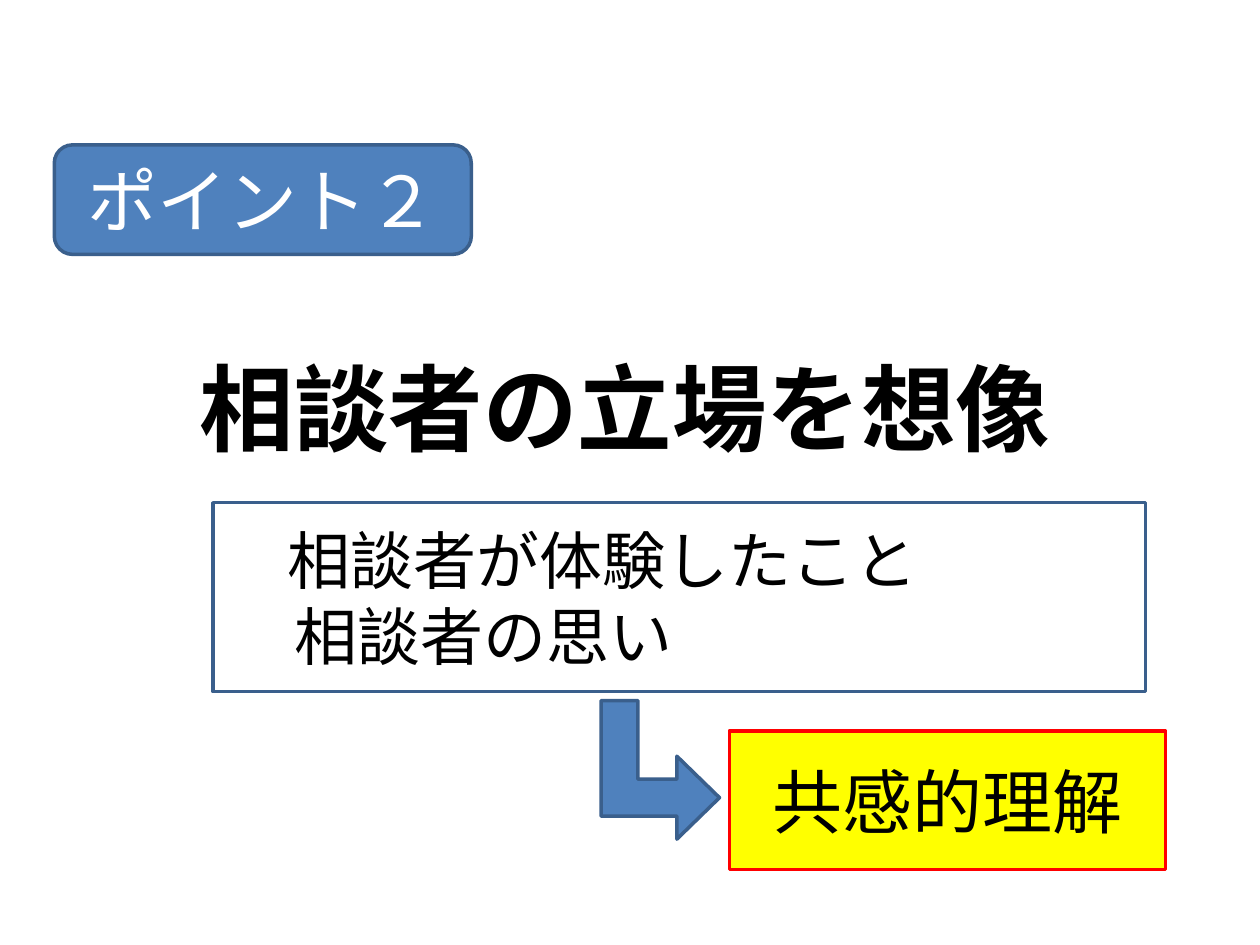
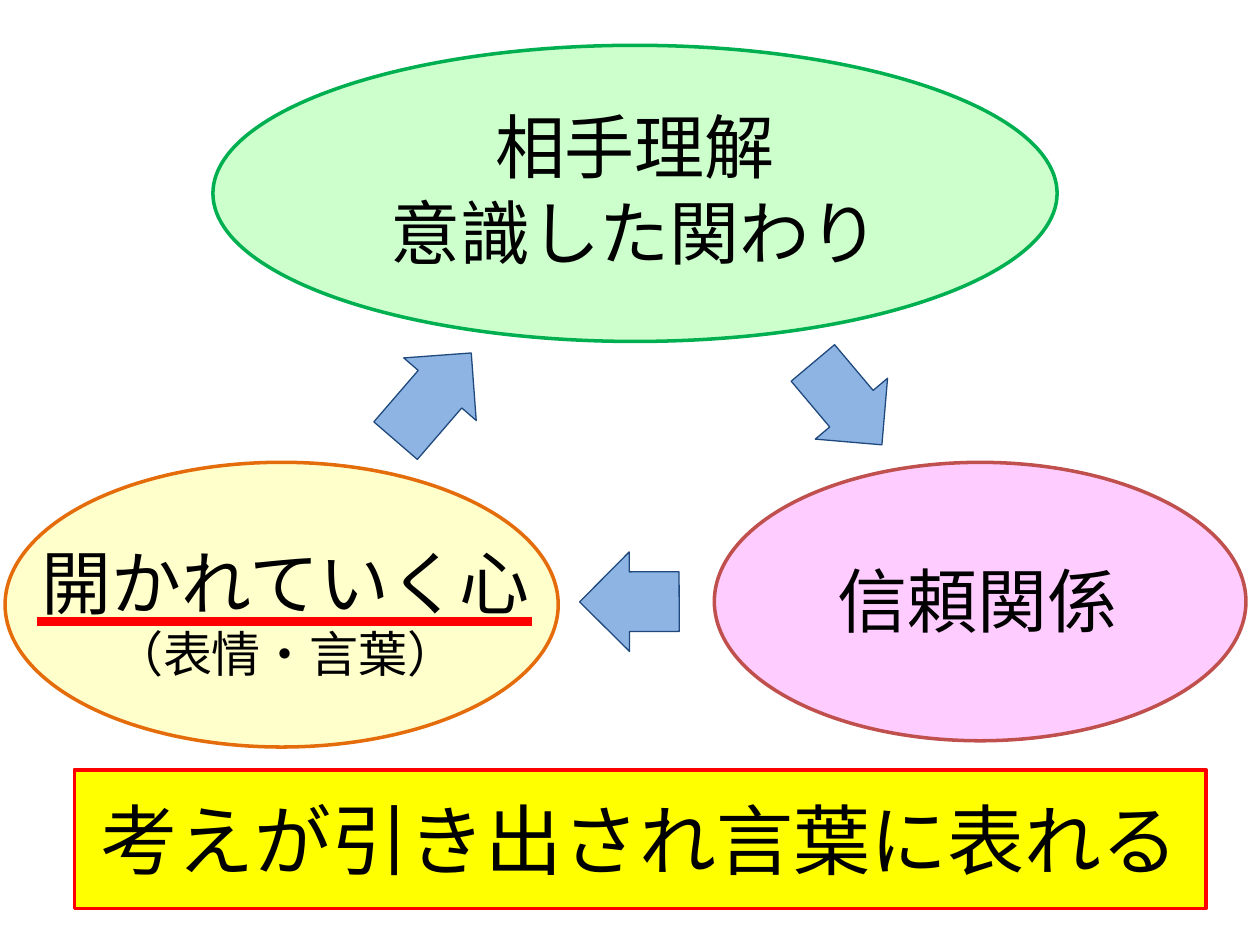
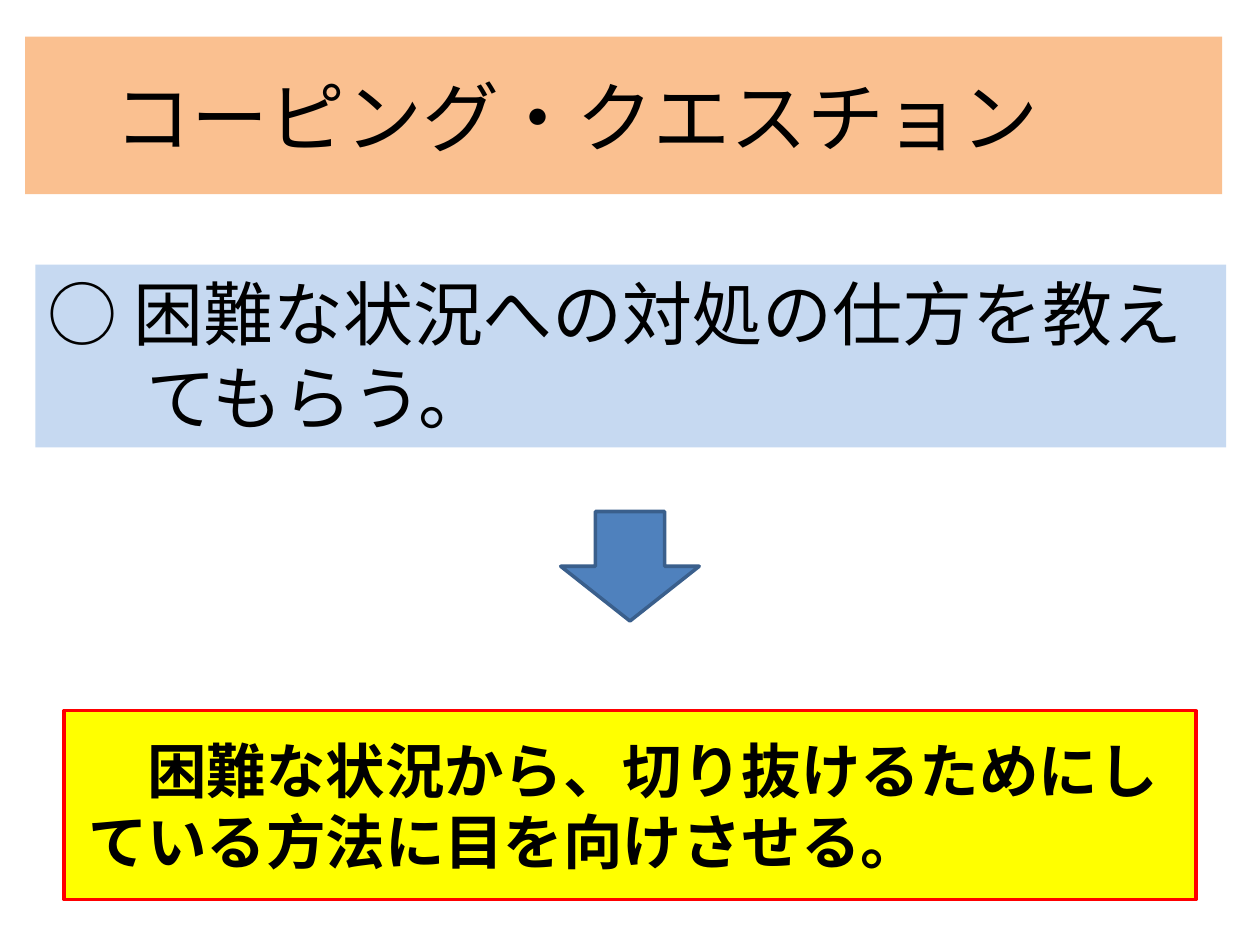
from dataclasses import dataclass
from typing import Optional

from lxml.etree import SubElement
from pptx import Presentation
from pptx.dml.color import RGBColor
from pptx.enum.shapes import MSO_CONNECTOR as Connector, MSO_SHAPE as Geometry
from pptx.enum.text import MSO_ANCHOR as Anchor, PP_ALIGN as Align
from pptx.oxml.ns import qn
from pptx.util import Pt

# Shared look
FONT = "Noto Sans CJK JP"
BLACK = RGBColor(0x00, 0x00, 0x00)
WHITE = RGBColor(0xFF, 0xFF, 0xFF)
BLUE = RGBColor(0x4F, 0x81, 0xBD)
BLUE_EDGE = RGBColor(0x3A, 0x5F, 0x8C)
CYCLE_BLUE = RGBColor(0x8E, 0xB4, 0xE3)
CYCLE_EDGE = RGBColor(0x1F, 0x49, 0x7D)
PALE_BLUE = RGBColor(0xC6, 0xD9, 0xF1)
PEACH = RGBColor(0xFA, 0xC0, 0x90)
YELLOW = RGBColor(0xFF, 0xFF, 0x00)
RED = RGBColor(0xFF, 0x00, 0x00)
PALE_GREEN = RGBColor(0xCC, 0xFF, 0xCC)
GREEN = RGBColor(0x00, 0xB0, 0x50)
PINK = RGBColor(0xFF, 0xCC, 0xFF)
BRICK = RGBColor(0xC0, 0x50, 0x4D)
CREAM = RGBColor(0xFF, 0xFF, 0xCC)
ORANGE = RGBColor(0xE4, 0x6C, 0x0A)


@dataclass(frozen=True)
class Frame:
    left: float
    top: float
    width: float
    height: float


@dataclass(frozen=True)
class Line:
    """One paragraph; lengths are in points."""
    text: str
    size: float
    color: RGBColor = BLACK
    bold: bool = False
    align: Align = Align.CENTER
    margin: float = 0
    indent: float = 0
    spacing: Optional[float] = None
    after: float = 0


@dataclass(frozen=True)
class Figure:
    geometry: Geometry
    frame: Frame
    fill: Optional[RGBColor] = None
    edge: Optional[RGBColor] = None
    edge_width: float = 2
    lines: tuple[Line, ...] = ()
    anchor: Anchor = Anchor.MIDDLE
    rotation: float = 0
    adjustments: tuple[float, ...] = ()


def write_lines(text_frame, lines: tuple[Line, ...], anchor: Anchor = Anchor.MIDDLE) -> None:
    text_frame.word_wrap = True
    text_frame.vertical_anchor = anchor
    for number, line in enumerate(lines):
        paragraph = text_frame.add_paragraph() if number else text_frame.paragraphs[0]
        paragraph.text = line.text
        paragraph.alignment = line.align
        paragraph.space_after = Pt(line.after)
        if line.spacing:
            paragraph.line_spacing = line.spacing
        font = paragraph.font
        font.size, font.bold, font.name = Pt(line.size), line.bold, FONT
        font.color.rgb = line.color
        # East Asian typeface and indents
        properties = paragraph._p.get_or_add_pPr()
        SubElement(properties.find(qn("a:defRPr")), qn("a:ea"), typeface=FONT)
        properties.set("marL", str(Pt(line.margin)))
        properties.set("indent", str(Pt(line.indent)))


def place(frame: Frame) -> tuple[Pt, ...]:
    return Pt(frame.left), Pt(frame.top), Pt(frame.width), Pt(frame.height)


def draw_figure(slide, figure: Figure) -> None:
    shape = slide.shapes.add_shape(figure.geometry, *place(figure.frame))
    shape.shadow.inherit = False
    shape.rotation = figure.rotation
    for number, value in enumerate(figure.adjustments):
        shape.adjustments[number] = value
    if figure.fill is None:
        shape.fill.background()
    else:
        shape.fill.solid()
        shape.fill.fore_color.rgb = figure.fill
    if figure.edge is None:
        shape.line.fill.background()
    else:
        shape.line.color.rgb = figure.edge
        shape.line.width = Pt(figure.edge_width)
    if figure.lines:
        write_lines(shape.text_frame, figure.lines, figure.anchor)


def draw_text(slide, frame: Frame, *lines: Line, inset: Optional[float] = None) -> None:
    text_frame = slide.shapes.add_textbox(*place(frame)).text_frame
    if inset is not None:
        text_frame.margin_left = text_frame.margin_right = Pt(inset)
        text_frame.margin_top = text_frame.margin_bottom = Pt(inset)
    write_lines(text_frame, lines)


def draw_rule(slide, left: float, right: float, y: float) -> None:
    rule = slide.shapes.add_connector(Connector.STRAIGHT, Pt(left), Pt(y), Pt(right), Pt(y))
    rule.line.color.rgb = RED
    rule.line.width = Pt(5)
    SubElement(rule._element.spPr, qn("a:effectLst"))


def conclusion(frame: Frame, line: Line) -> Figure:
    """Yellow box with a red edge that closes each slide."""
    return Figure(Geometry.RECTANGLE, frame, YELLOW, RED, lines=(line,))


def cycle_arrow(frame: Frame, rotation: float) -> Figure:
    return Figure(Geometry.RIGHT_ARROW, frame, CYCLE_BLUE, CYCLE_EDGE, 0.75,
                  rotation=rotation, adjustments=(0.6, 0.5))


def build_point(slide) -> None:
    draw_text(slide, Frame(48.2, 162, 617.8, 108),
              Line("相談者の立場を想像", 54, bold=True, spacing=1.5))
    experience = (
        Line("相談者が体験したこと", 36, align=Align.LEFT, margin=35.3),
        Line("相談者の思い", 36, align=Align.LEFT, indent=39.3),
    )
    for figure in (
        Figure(Geometry.ROUNDED_RECTANGLE, Frame(31, 82.8, 238.3, 62.6), BLUE, BLUE_EDGE,
               lines=(Line("ポイント２", 40, WHITE),)),
        Figure(Geometry.RECTANGLE, Frame(121.7, 287.3, 532.8, 108), edge=BLUE_EDGE,
               lines=experience),
        conclusion(Frame(416.9, 417.6, 249.1, 79.2), Line("共感的理解", 40)),
        Figure(Geometry.BENT_UP_ARROW, Frame(337.7, 406.1, 79.2, 67.7), BLUE, BLUE_EDGE,
               rotation=90, adjustments=(0.311, 0.35, 0.36)),
    ):
        draw_figure(slide, figure)


def build_cycle(slide) -> None:
    # Three stages and the arrows between them
    for figure in (
        Figure(Geometry.OVAL, Frame(121.7, 25.9, 482.4, 169.2), PALE_GREEN, GREEN),
        Figure(Geometry.OVAL, Frame(408.2, 264.2, 303.8, 159.1), PINK, BRICK),
        Figure(Geometry.OVAL, Frame(2.9, 264.2, 316.1, 162.7), CREAM, ORANGE),
        cycle_arrow(Frame(453.6, 203.8, 61.2, 54), 49.9),
        cycle_arrow(Frame(331.2, 315.4, 56.9, 56.9), 179.8),
        cycle_arrow(Frame(214.6, 199.4, 66.2, 54.7), 310.8),
        conclusion(Frame(42.5, 439.9, 646.6, 79.2), Line("考えが引き出され言葉に表れる", 44)),
    ):
        draw_figure(slide, figure)

    # Stage labels
    understanding = [Line(text, 40, spacing=0.9, after=5.6)
                     for text in ("相手理解", "意識した関わり")]
    draw_text(slide, Frame(192.2, 51.1, 341.3, 119.5), *understanding, inset=4.3)
    draw_rule(slide, 20.9, 303.8, 355)
    draw_text(slide, Frame(14.4, 303.8, 297.4, 90.7),
              Line("開かれていく心", 40), Line("（表情・言葉）", 28))
    draw_text(slide, Frame(450.7, 315.4, 215.3, 54.7), Line("信頼関係", 40))


def build_question(slide) -> None:
    for figure in (
        Figure(Geometry.RECTANGLE, Frame(14.4, 20.9, 684, 90), PEACH,
               lines=(Line("コーピング・クエスチョン", 44, align=Align.LEFT, indent=44),)),
        Figure(Geometry.RECTANGLE, Frame(20.2, 151.2, 680.4, 104.4), PALE_BLUE,
               anchor=Anchor.TOP,
               lines=(Line("○ 困難な状況への対処の仕方を教えてもらう。", 40,
                           align=Align.LEFT, margin=56.2, indent=-56.2),)),
        Figure(Geometry.DOWN_ARROW, Frame(320.4, 292.3, 79.2, 62.6), BLUE, BLUE_EDGE),
        conclusion(Frame(36.7, 406.1, 646.6, 108),
                   Line("困難な状況から、切り抜けるためにしている方法に目を向けさせる。", 34,
                        bold=True, align=Align.LEFT, margin=6.5, indent=34)),
    ):
        draw_figure(slide, figure)


def main() -> None:
    deck = Presentation()
    deck.slide_width, deck.slide_height = Pt(720), Pt(540)
    blank = deck.slide_layouts[6]
    for build in (build_point, build_cycle, build_question):
        build(deck.slides.add_slide(blank))
    deck.save("out.pptx")


if __name__ == "__main__":
    main()
